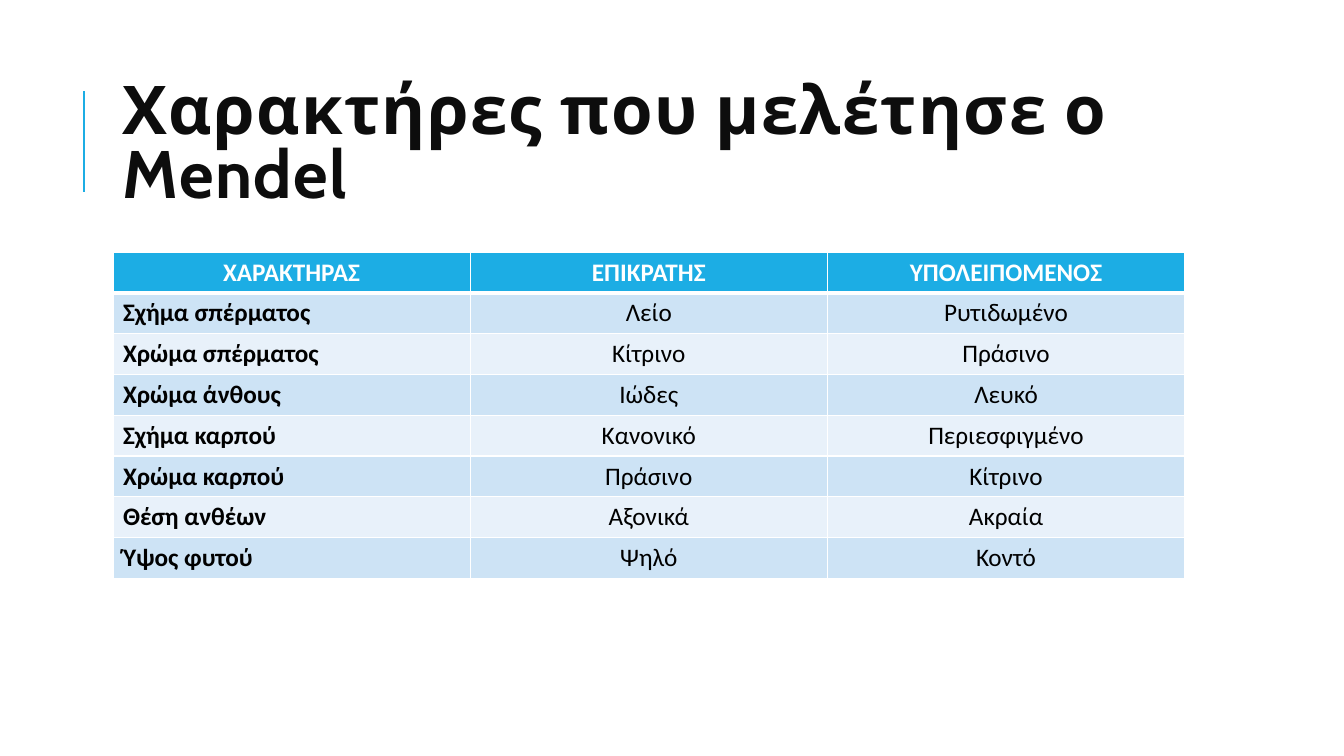
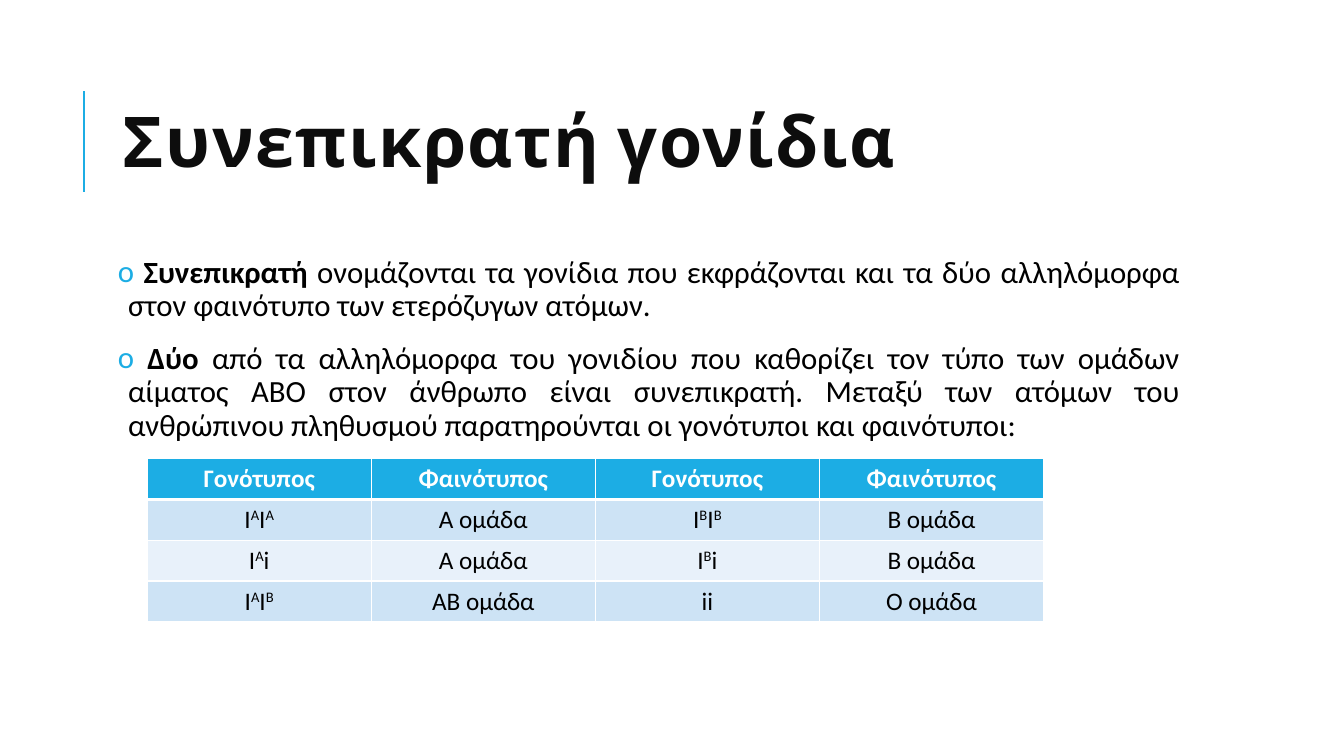
from lxml.etree import SubElement as Sub
from pptx import Presentation
from pptx.dml.color import RGBColor as Rgb
from pptx.enum.shapes import MSO_CONNECTOR as Link
from pptx.enum.text import MSO_ANCHOR as Anchor, PP_ALIGN as Align
from pptx.oxml.ns import qn
from pptx.util import Inches, Pt

HUES = {"main": "1CADE4", "title": "0D0D0D", "text": "000000",
        "white": "FFFFFF", "odd": "CDE3F5", "even": "E8F1FA"}
HEAD = {"name": "Cabin", "bold": True}
CELL = {"name": "Calibri", "size": Pt(18)}
BODY = {"name": "Calibri", "size": Pt(22)}
FLOW = {"alignment": Align.JUSTIFY, "line_spacing": 0.9, "space_after": Pt(2)}
LEFT, TOP, WIDE = 1.12, 2.5, 10.63
ROW = 0.405

TRAITS = [
    ("ΧΑΡΑΚΤΗΡΑΣ", "ΕΠΙΚΡΑΤΗΣ", "ΥΠΟΛΕΙΠΟΜΕΝΟΣ"),
    ("Σχήμα σπέρματος", "Λείο", "Ρυτιδωμένο"),
    ("Χρώμα σπέρματος", "Κίτρινο", "Πράσινο"),
    ("Χρώμα άνθους", "Ιώδες", "Λευκό"),
    ("Σχήμα καρπού", "Κανονικό", "Περιεσφιγμένο"),
    ("Χρώμα καρπού", "Πράσινο", "Κίτρινο"),
    ("Θέση ανθέων", "Αξονικά", "Ακραία"),
    ("Ύψος φυτού", "Ψηλό", "Κοντό"),
]
BLOOD = [
    ("Γονότυπος", "Φαινότυπος", "Γονότυπος", "Φαινότυπος"),
    ("I^AI^A", "Α ομάδα", "I^BI^B", "Β ομάδα"),
    ("I^Ai", "Α ομάδα", "I^Bi", "Β ομάδα"),
    ("I^AI^B", "ΑΒ ομάδα", "ii", "Ο ομάδα"),
]
POINTS = [
    (" Συνεπικρατή ",
     "ονομάζονται τα γονίδια που εκφράζονται και τα δύο αλληλόμορφα "
     "στον φαινότυπο των ετερόζυγων ατόμων."),
    (" Δύο",
     " από τα αλληλόμορφα του γονιδίου που καθορίζει τον τύπο των ομάδων "
     "αίματος ΑΒΟ στον άνθρωπο είναι συνεπικρατή. Μεταξύ των ατόμων του "
     "ανθρώπινου πληθυσμού παρατηρούνται οι γονότυποι και φαινότυποι:"),
]
SLIDES = [
    {"title": "Χαρακτήρες που μελέτησε ο Mendel", "size": 48, "points": [],
     "rows": TRAITS, "at": (LEFT, TOP, WIDE), "names": True},
    {"title": "Συνεπικρατή γονίδια", "size": 50, "points": POINTS,
     "rows": BLOOD, "at": (1.46, 4.55, 8.89), "names": False},
]


def style(item, form):
    for key, val in form.items():
        setattr(item, key, val)


def hue(name):
    return Rgb.from_string(HUES[name])


def write(para, text, form, tint):
    run = para.add_run()
    run.text = text
    style(run.font, form)
    run.font.color.rgb = hue(tint)
    return run._r.get_or_add_rPr()


def frame(slide, top, high, form):
    box = slide.shapes.add_textbox(
        Inches(LEFT), Inches(top), Inches(WIDE), Inches(high))
    style(box.text_frame, {"word_wrap": True, **form})
    return box.text_frame


def add_title(slide, text, size):
    bar = slide.shapes.add_connector(
        Link.STRAIGHT, Inches(0.83), Inches(1.9), Inches(0.83), Inches(0.9))
    bar.line.color.rgb = hue("main")
    bar.line.width = Pt(1.5)
    Sub(bar._element.spPr, qn("a:effectLst"))
    para = frame(slide, 0.64, 1.64,
                 {"vertical_anchor": Anchor.MIDDLE}).paragraphs[0]
    para.line_spacing = 0.8
    write(para, text, {**HEAD, "size": Pt(size)}, "title").set("spc", "100")


def add_bullet(para):
    props = para._p.get_or_add_pPr()
    props.set("marL", str(Inches(0.1)))
    props.set("indent", str(-Inches(0.1)))
    tint = Sub(props, qn("a:buClr"))
    Sub(tint, qn("a:srgbClr"), val=HUES["main"])
    Sub(props, qn("a:buFont"), typeface="Calibri")
    Sub(props, qn("a:buChar"), char="o")


def add_points(slide, points):
    pad = Inches(0.05)
    body = frame(slide, TOP, 4.4, {"margin_left": pad, "margin_right": pad})
    for num, (lead, rest) in enumerate(points):
        para = body.add_paragraph() if num else body.paragraphs[0]
        add_bullet(para)
        style(para, {**FLOW, "space_before": Pt(12 if num else 0)})
        write(para, lead, {**BODY, "bold": True}, "text")
        write(para, rest, {**BODY, "bold": False}, "text")


def add_edges(cell, row):
    thick = {(0, "B"), (1, "T")}
    for side in "LRTB":
        width = Pt(3 if (row, side) in thick else 1)
        edge = Sub(cell._tc.get_or_add_tcPr(), qn("a:ln" + side), w=str(width))
        Sub(Sub(edge, qn("a:solidFill")), qn("a:srgbClr"), val=HUES["white"])


def write_cell(para, text, form, tint):
    base, *tails = text.split("^")
    write(para, base, form, tint)
    for tail in tails:
        write(para, tail[0], form, tint).set("baseline", "30000")
        if tail[1:]:
            write(para, tail[1:], form, tint)


def add_grid(slide, rows, at, names):
    left, top, wide = at
    count = len(rows[0])
    grid = slide.shapes.add_table(
        len(rows), count, Inches(left), Inches(top),
        Inches(wide), Inches(ROW * len(rows))).table
    for col in grid.columns:
        col.width = Inches(wide / count)
    for r, texts in enumerate(rows):
        grid.rows[r].height = Inches(ROW)
        for c, text in enumerate(texts):
            cell = grid.cell(r, c)
            add_edges(cell, r)
            cell.fill.solid()
            cell.fill.fore_color.rgb = hue(
                "main" if r == 0 else "odd" if r % 2 else "even")
            name = names and c == 0 and r > 0
            para = cell.text_frame.paragraphs[0]
            para.alignment = Align.LEFT if name else Align.CENTER
            write_cell(para, text, {**CELL, "bold": r == 0 or name},
                       "text" if r else "white")


def main():
    deck = Presentation()
    style(deck, {"slide_width": Inches(13.33), "slide_height": Inches(7.5)})
    for page in SLIDES:
        slide = deck.slides.add_slide(deck.slide_layouts[6])
        add_title(slide, page["title"], page["size"])
        if page["points"]:
            add_points(slide, page["points"])
        add_grid(slide, page["rows"], page["at"], page["names"])
    deck.save("out.pptx")


if __name__ == "__main__":
    main()
